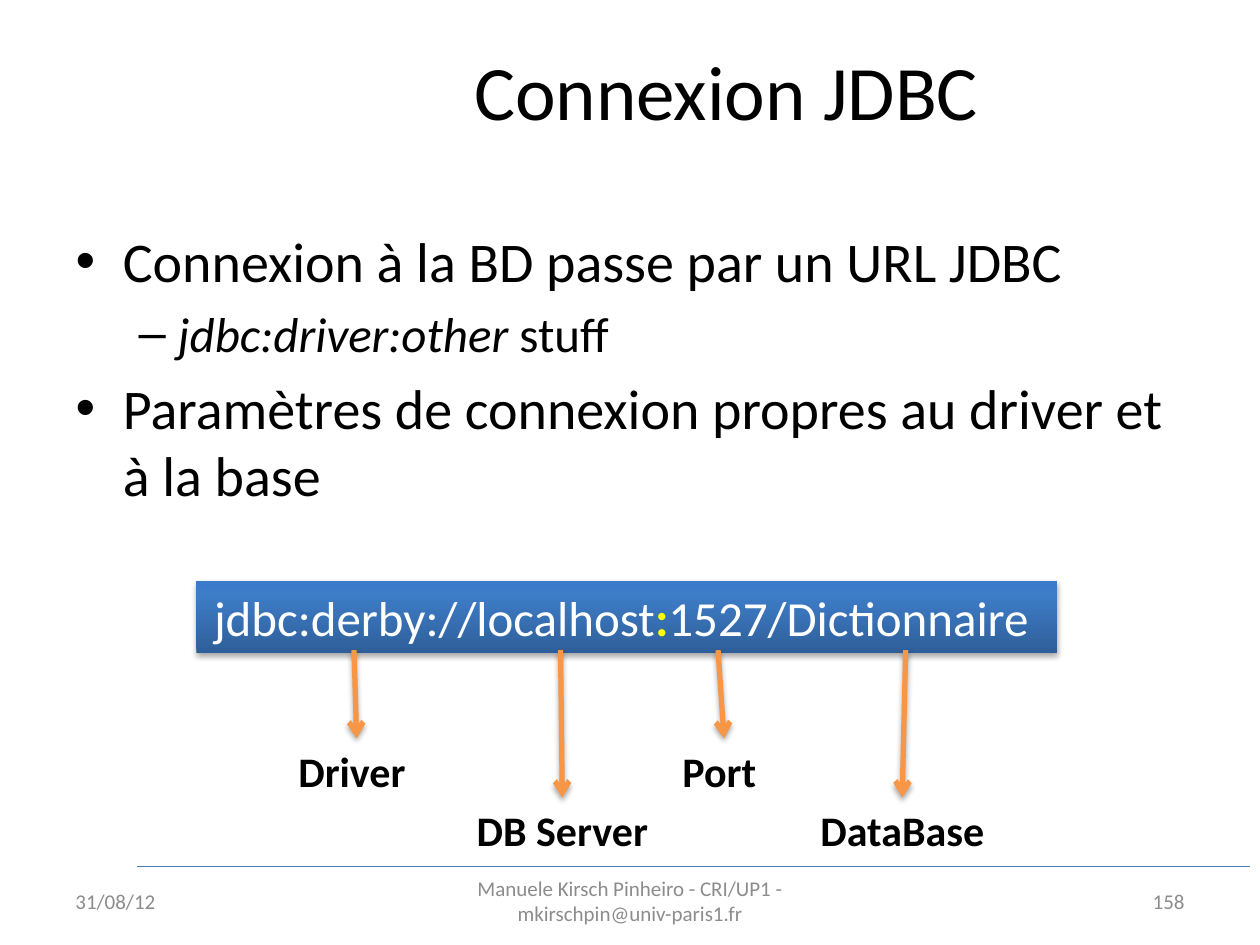
from lxml import etree
from pptx import Presentation
from pptx import util as u
from pptx.dml.color import RGBColor
from pptx.enum import shapes as sh, text as tx
from pptx.oxml import parse_xml
from pptx.oxml.ns import nsdecls, qn

FONT = "Calibri"
LEFT, MID, RIGHT = tx.PP_ALIGN.LEFT, tx.PP_ALIGN.CENTER, tx.PP_ALIGN.RIGHT


def hue(code):
    return RGBColor.from_string(code)


def part(box, x, y, w, h):
    left, top, wide, high = box
    return (int(left + wide * x / 100), int(top + high * y / 100),
            int(wide * w / 100), int(high * h / 100))


def move(shape, box):
    shape.left, shape.top, shape.width, shape.height = box


def style(run, size, code, bold=False, slant=False):
    font = run.font
    font.name, font.size, font.bold, font.italic = FONT, u.Pt(size), bold, slant
    font.color.rgb = hue(code)


def label(slide, box, words, size, code, side=MID, bold=False, wrap=True):
    frame = slide.shapes.add_textbox(*box).text_frame
    frame.word_wrap = wrap
    frame.vertical_anchor = tx.MSO_ANCHOR.MIDDLE
    frame.text = words
    para = frame.paragraphs[0]
    para.alignment = side
    style(para.runs[0], size, code, bold)


def shade(shape, soft=True):
    props = shape._element.spPr
    for old in props.findall(qn("a:effectLst")):
        props.remove(old)
    glow = ('<a:outerShdw blurRad="40000" dist="23000" dir="5400000" rotWithShape="0">'
            '<a:srgbClr val="000000"><a:alpha val="35000"/></a:srgbClr></a:outerShdw>')
    props.append(parse_xml(
        f'<a:effectLst {nsdecls("a")}>{glow if soft else ""}</a:effectLst>'))


def line(slide, box, start, end, code, width, arrow=False):
    x1, y1 = part(box, *start, 0, 0)[:2]
    x2, y2 = part(box, *end, 0, 0)[:2]
    rule = slide.shapes.add_connector(sh.MSO_CONNECTOR.STRAIGHT, x1, y1, x2, y2)
    rule.line.color.rgb = hue(code)
    rule.line.width = u.Pt(width)
    if arrow:
        etree.SubElement(rule.line._get_or_add_ln(), qn("a:tailEnd"), type="arrow")
    shade(rule, arrow)


def title(slide, box):
    shape = slide.shapes.title
    move(shape, box)
    shape.text_frame.text = "Connexion JDBC"
    shape.text_frame.vertical_anchor = tx.MSO_ANCHOR.MIDDLE
    style(shape.text_frame.paragraphs[0].runs[0], 44, "000000")


def body(slide, box):
    shape = slide.placeholders[1]
    move(shape, box)
    frame = shape.text_frame
    items = [(0, [("Connexion à la BD passe par un URL JDBC", False)]),
             (1, [("jdbc:driver:other", True), (" stuff", False)]),
             (0, [("Paramètres de connexion propres au driver et à la base", False)])]
    for i, (level, runs) in enumerate(items):
        para = frame.add_paragraph() if i else frame.paragraphs[0]
        para.level = level
        if not i:
            para.space_before = u.Pt(0)
        for words, slant in runs:
            run = para.add_run()
            run.text = words
            style(run, 28 if level else 32, "000000", slant=slant)


def banner(slide, box):
    shape = slide.shapes.add_shape(sh.MSO_SHAPE.RECTANGLE, *box)
    shape.line.fill.background()
    stops = "".join(f'<a:gs pos="{pos}000"><a:srgbClr val="{code}"/></a:gs>'
                    for pos, code in ((0, "2F5F99"), (80, "3D7CC7"), (100, "3A7CCB")))
    shape._element.spPr.find(qn("a:prstGeom")).addnext(parse_xml(
        f'<a:gradFill {nsdecls("a")} rotWithShape="1"><a:gsLst>{stops}</a:gsLst>'
        '<a:lin ang="16200000" scaled="0"/></a:gradFill>'))
    shade(shape)
    frame = shape.text_frame
    frame.word_wrap = False
    frame.vertical_anchor = tx.MSO_ANCHOR.TOP
    para = frame.paragraphs[0]
    para.alignment = MID
    for words, code, bold in (("jdbc:derby://localhost", "FFFFFF", False),
                              (":", "FFFF00", True),
                              ("1527/Dictionnaire ", "FFFFFF", False)):
        run = para.add_run()
        run.text = words
        style(run, 28, code, bold)


def diagram(slide, box):
    banner(slide, part(box, 0, 0, 100, 25.6))
    near, far = 56, 77.1
    for words, start, end, row, wide in (("Driver ", 18.3, 18.6, near, 16.7),
                                         ("DB Server", 42.3, 42.5, far, 23.1),
                                         ("Port ", 60.6, 61.3, near, 12.7),
                                         ("DataBase", 82.4, 82, far, 22.3)):
        label(slide, part(box, end - wide / 2, row, wide, 22.9), words, 24,
              "000000", bold=True, wrap=False)
        line(slide, box, (start, 24.6), (end, row), "F79646", 3, True)


def footer(slide, box):
    for words, x, wide, side in (
            ("31/08/12", 0, 25.9, LEFT),
            ("Manuele Kirsch Pinheiro - CRI/UP1 - mkirschpin@univ-paris1.fr", 32.4, 35.2, MID),
            ("158", 74.1, 25.9, RIGHT)):
        label(slide, part(box, x, 0, wide, 100), words, 12, "8C8C8C", side)


def main():
    deck = Presentation()
    deck.slide_width, deck.slide_height = u.Inches(10), u.Inches(7.5)
    page = (0, 0, deck.slide_width, deck.slide_height)
    slide = deck.slides.add_slide(deck.slide_layouts[1])
    line(slide, page, (10.9, 91.7), (99.2, 91.7), "4B7EBC", 0.75)
    title(slide, part(page, 17.2, 1.1, 80.9, 16.7))
    body(slide, part(page, 5, 23.3, 90, 66))
    footer(slide, part(page, 5, 92.7, 90, 5.3))
    diagram(slide, part(page, 15.6, 61.5, 68.3, 29.7))
    deck.save("out.pptx")


if __name__ == "__main__":
    main()
